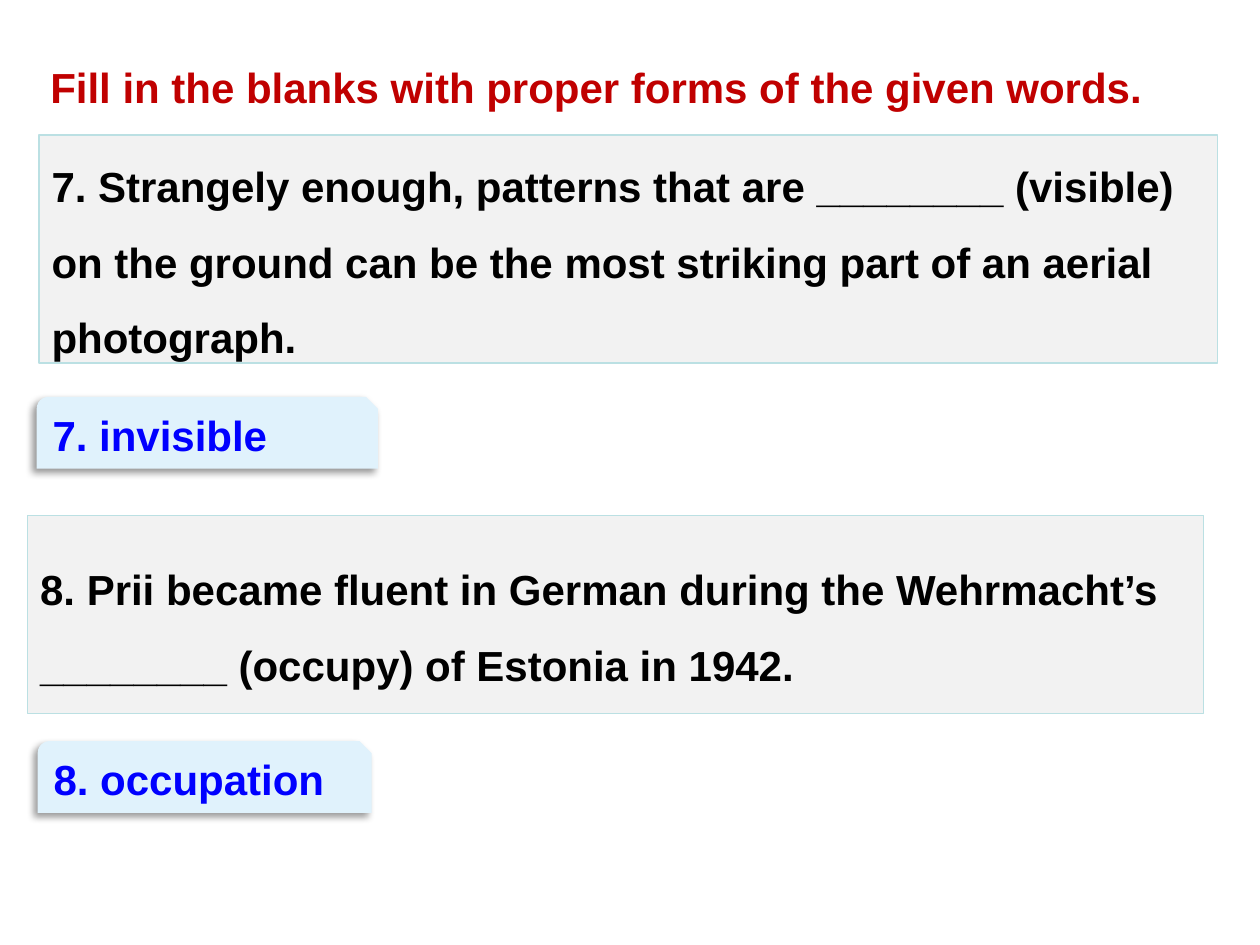
from lxml.etree import SubElement
from pptx import Presentation
from pptx.dml.color import RGBColor
from pptx.enum.shapes import MSO_SHAPE
from pptx.enum.text import MSO_ANCHOR, MSO_AUTO_SIZE, PP_ALIGN
from pptx.oxml.ns import qn
from pptx.util import Cm, Pt

RED = RGBColor(0xC0, 0x00, 0x00)
BLACK = RGBColor(0x00, 0x00, 0x00)
BLUE = RGBColor(0x00, 0x00, 0xFF)
GREY = RGBColor(0xF2, 0xF2, 0xF2)
TEAL = RGBColor(0xBB, 0xE0, 0xE3)
SKY = RGBColor(0xE0, 0xF2, 0xFC)

# Each item: question, its box, answer, its box (left, top, width, height in cm)
ITEMS = [
    ("7. Strangely enough, patterns that are ________ (visible) on the ground "
     "can be the most striking part of an aerial photograph.",
     (0.79, 2.72, 23.75, 4.6),
     "7. invisible", (0.74, 8, 6.88, 1.45)),
    ("8. Prii became fluent in German during the Wehrmacht’s ________ (occupy) "
     "of Estonia in 1942.",
     (0.56, 10.39, 23.7, 3.99),
     "8. occupation", (0.76, 14.94, 6.73, 1.45)),
]


def write(shape, text, color, anchor=MSO_ANCHOR.MIDDLE, spacing=1):
    frame = shape.text_frame
    frame.text = text
    frame.word_wrap = True
    frame.auto_size = MSO_AUTO_SIZE.NONE
    frame.vertical_anchor = anchor
    line = frame.paragraphs[0]
    line.alignment = PP_ALIGN.LEFT
    line.line_spacing = spacing
    font = line.runs[0].font
    font.name, font.size, font.bold = "Arial", Pt(24), True
    font.color.rgb = color


def add_panel(slide, kind, box, fill):
    panel = slide.shapes.add_shape(kind, *map(Cm, box))
    panel.shadow.inherit = False
    panel.fill.solid()
    panel.fill.fore_color.rgb = fill
    return panel


def cast_shadow(shape):
    """Give the shape a soft black shadow to its lower left."""
    effects = shape.element.spPr.find(qn("a:effectLst"))
    outer = SubElement(effects, qn("a:outerShdw"), blurRad=str(Pt(4)),
                       dist=str(Pt(3)), dir=str(135 * 60000),
                       algn="tr", rotWithShape="0")
    color = SubElement(outer, qn("a:srgbClr"), val=str(BLACK))
    SubElement(color, qn("a:alpha"), val="40000")


def add_title(slide, text, box):
    title = slide.shapes.title
    title.left, title.top, title.width, title.height = map(Cm, box)
    write(title, text, RED, MSO_ANCHOR.TOP)


def add_question(slide, text, box):
    panel = add_panel(slide, MSO_SHAPE.RECTANGLE, box, GREY)
    panel.line.color.rgb = TEAL
    panel.line.width = Pt(0.75)
    write(panel, text, BLACK, spacing=1.5)


def add_answer(slide, text, box):
    panel = add_panel(slide, MSO_SHAPE.SNIP_ROUND_RECTANGLE, box, SKY)
    panel.line.fill.background()
    cast_shadow(panel)
    write(panel, text, BLUE)


def main():
    deck = Presentation()
    deck.slide_width, deck.slide_height = Cm(25.4), Cm(19.05)
    slide = deck.slides.add_slide(deck.slide_layouts[5])
    add_title(slide, "Fill in the blanks with proper forms of the given words.",
              (0.76, 1.12, 23.7, 1.27))
    for question, area, answer, tag in ITEMS:
        add_question(slide, question, area)
        add_answer(slide, answer, tag)
    deck.save("out.pptx")


if __name__ == "__main__":
    main()
